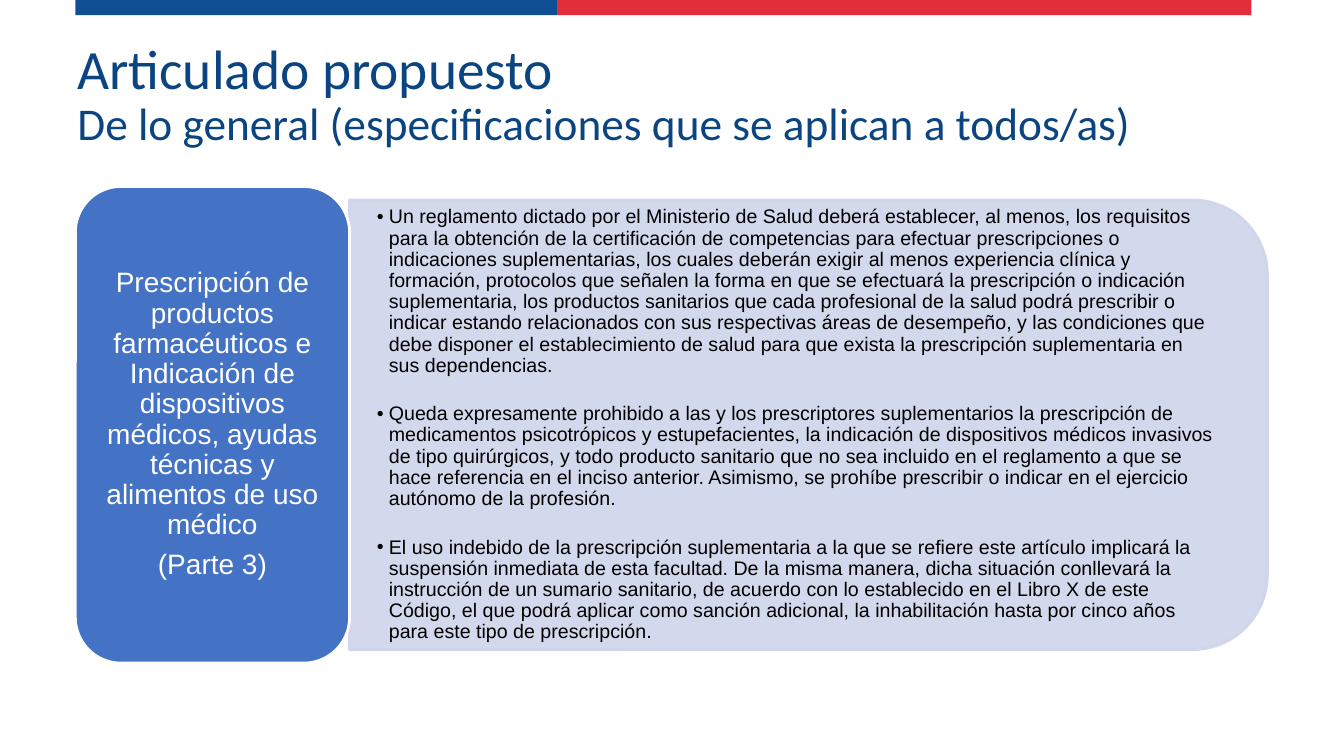
from lxml import etree
from pptx import Presentation
from pptx.dml.color import RGBColor
from pptx.enum.shapes import MSO_SHAPE
from pptx.enum.text import MSO_ANCHOR, MSO_AUTO_SIZE, PP_ALIGN
from pptx.oxml.ns import qn
from pptx.util import Cm, Pt

RECT, ROUNDED, TOP_ROUNDED = (
    MSO_SHAPE.RECTANGLE, MSO_SHAPE.ROUNDED_RECTANGLE, MSO_SHAPE.ROUND_2_SAME_RECTANGLE)
MIDDLE, NO_FIT = MSO_ANCHOR.MIDDLE, MSO_AUTO_SIZE.NONE
LEFT, CENTER = PP_ALIGN.LEFT, PP_ALIGN.CENTER

# Content
TITLE_LINES = [
    ("Articulado propuesto", 39.6),
    ("De lo general (especificaciones que se aplican a todos/as)", 32.4),
]
TOPIC = [
    "Prescripción de productos farmacéuticos e Indicación de dispositivos médicos, "
    "ayudas técnicas y alimentos de uso médico",
    "(Parte 3)",
]
RULES = [
    "Un reglamento dictado por el Ministerio de Salud deberá establecer, al menos, los "
    "requisitos para la obtención de la certificación de competencias para efectuar "
    "prescripciones o indicaciones suplementarias, los cuales deberán exigir al menos "
    "experiencia clínica y formación, protocolos que señalen la forma en que se efectuará la "
    "prescripción o indicación suplementaria, los productos sanitarios que cada profesional "
    "de la salud podrá prescribir o indicar estando relacionados con sus respectivas áreas de "
    "desempeño, y las condiciones que debe disponer el establecimiento de salud para que "
    "exista la prescripción suplementaria en sus dependencias.",
    "Queda expresamente prohibido a las y los prescriptores suplementarios la prescripción de "
    "medicamentos psicotrópicos y estupefacientes, la indicación de dispositivos médicos "
    "invasivos de tipo quirúrgicos, y todo producto sanitario que no sea incluido en el "
    "reglamento a que se hace referencia en el inciso anterior. Asimismo, se prohíbe "
    "prescribir o indicar en el ejercicio autónomo de la profesión.",
    "El uso indebido de la prescripción suplementaria a la que se refiere este artículo "
    "implicará la suspensión inmediata de esta facultad. De la misma manera, dicha situación "
    "conllevará la instrucción de un sumario sanitario, de acuerdo con lo establecido en el "
    "Libro X de este Código, el que podrá aplicar como sanción adicional, la inhabilitación "
    "hasta por cinco años para este tipo de prescripción.",
]

COLORS = {"flag_blue": "0F4E93", "flag_red": "E22D3B", "title": "0B4581",
          "panel": "CFD5EA", "topic": "4472C4", "white": "FFFFFF", "black": "000000"}

# Layout in cm: left, top, width, height
FLAG_BANDS = [("flag_blue", (1.9, 0, 12.14, 0.38)), ("flag_red", (14.04, 0, 17.5, 0.38))]
TITLE_BOX = (1.7, 1.65, 27.36, 1.52)
TOPIC_BOX = (1.9, 4.7, 6.91, 12.01)
PANEL_BOX = (8.8, 5.04, 23.14, 11.33)
RULES_BOX = (8.81, 5.59, 22.58, 10.24)
BULLET_INDENT = Cm(0.3)


def color(name):
    return RGBColor.from_string(COLORS[name])


def place(shape, box):
    for side, length in zip(("left", "top", "width", "height"), box):
        setattr(shape, side, Cm(length))


def add_block(kind, box, fill, line=None):
    block = slide.shapes.add_shape(kind, *map(Cm, box))
    block.shadow.inherit = False
    block.fill.solid()
    block.fill.fore_color.rgb = color(fill)
    if line:
        block.line.color.rgb = color(line)
        block.line.width = Pt(2)
    else:
        block.line.fill.background()
    return block


def format_frame(frame, side, edge):
    values = {"word_wrap": True, "auto_size": NO_FIT, "vertical_anchor": MIDDLE,
              "margin_left": Cm(side), "margin_right": Cm(side),
              "margin_top": Cm(edge), "margin_bottom": Cm(edge)}
    for name, value in values.items():
        setattr(frame, name, value)


def add_bullet(paragraph):
    properties = paragraph._p.get_or_add_pPr()
    properties.set("marL", str(BULLET_INDENT))
    properties.set("indent", str(-BULLET_INDENT))
    etree.SubElement(properties, qn("a:buFont")).set("typeface", "Arial")
    etree.SubElement(properties, qn("a:buChar")).set("char", "•")


def write_paragraphs(frame, texts, size, ink, align, gap, bulleted=False):
    for index, text in enumerate(texts):
        paragraph = frame.add_paragraph() if index else frame.paragraphs[0]
        paragraph.text = text
        if bulleted:
            add_bullet(paragraph)
        values = {"alignment": align, "line_spacing": 0.9, "space_after": Pt(0),
                  "space_before": Pt(gap if index else 0)}
        for name, value in values.items():
            setattr(paragraph, name, value)
        paragraph.font.name = "Arial"
        paragraph.font.size = Pt(size)
        paragraph.font.color.rgb = color(ink)


prs = Presentation()
prs.slide_width, prs.slide_height = Cm(33.87), Cm(19.05)
slide = prs.slides.add_slide(prs.slide_layouts[1])
title, rules = slide.placeholders

# Flag bands along the top edge
for band_color, band_box in FLAG_BANDS:
    add_block(RECT, band_box, band_color)

# Title on two lines
place(title, TITLE_BOX)
format_frame(title.text_frame, 0.25, 0.13)
heading = title.text_frame.paragraphs[0]
heading.alignment = LEFT
heading.line_spacing = 0.9
for index, (line_text, size) in enumerate(TITLE_LINES):
    if index:
        heading.add_line_break()
    run = heading.add_run()
    run.text = line_text
    run.font.name = "Calibri"
    run.font.size = Pt(size)
    run.font.color.rgb = color("title")

# Panel: turned a quarter so that its rounded corners face right
left, top, width, height = PANEL_BOX
shift = (width - height) / 2
panel = add_block(TOP_ROUNDED, (left + shift, top - shift, height, width), "panel", "panel")
panel.rotation = 90
for panel_color in panel.element.spPr.iter(qn("a:srgbClr")):
    etree.SubElement(panel_color, qn("a:alpha")).set("val", "90000")
rules.element.addprevious(panel.element)

# Rules over the panel
place(rules, RULES_BOX)
format_frame(rules.text_frame, 0.69, 0.36)
write_paragraphs(rules.text_frame, RULES, 14, "black", LEFT, 19.5, bulleted=True)

# Topic block
topic = add_block(ROUNDED, TOPIC_BOX, "topic", "white")
format_frame(topic.text_frame, 0.2, 0.1)
write_paragraphs(topic.text_frame, TOPIC, 20, "white", CENTER, 7)

prs.save("out.pptx")
